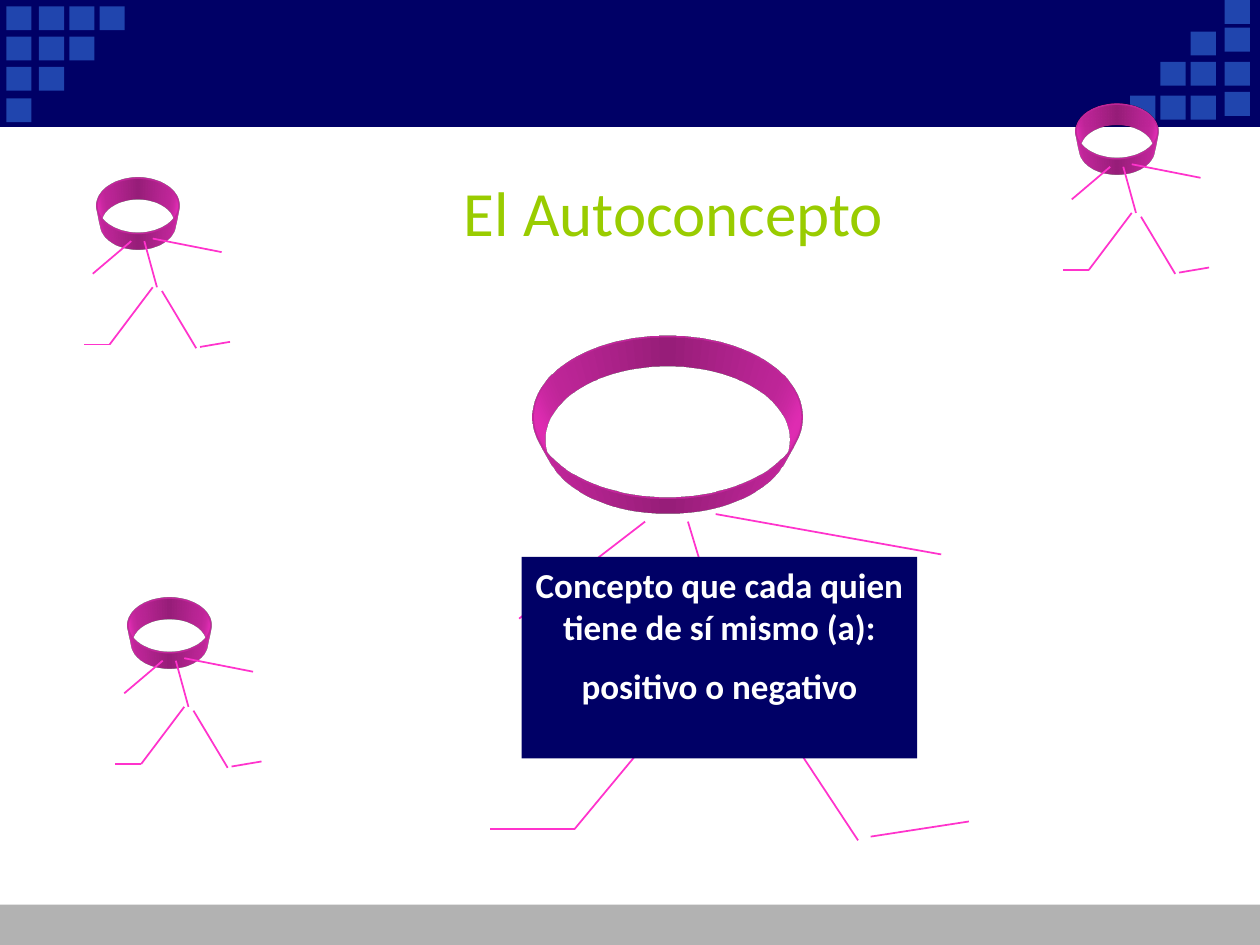
from dataclasses import dataclass

import lxml.etree
import pptx
import pptx.dml.color
import pptx.enum.shapes
import pptx.enum.text
import pptx.oxml.ns
import pptx.util

Inches = pptx.util.Inches
Shape = pptx.enum.shapes.MSO_SHAPE
Align = pptx.enum.text.PP_ALIGN


@dataclass
class Theme:
    navy: str = "000066"
    tile: str = "2045AE"
    gray: str = "B2B2B2"
    lime: str = "99CC00"
    white: str = "FFFFFF"
    pink: str = "FF33CC"
    font: str = "Calibri"
    title: int = 36
    body: int = 20


LIMBS = [
    (1.23, 1.47, 1.56, 2.56),
    (1.45, 1.41, 3.24, 1.73),
    (0.89, 1.47, -0.11, 2.24),
    (1.45, 2.56, 0.33, 3.91),
    (1.69, 2.65, 2.58, 4),
    (2.68, 3.97, 3.46, 3.85),
    (0.33, 3.91, -0.34, 3.91),
]
HEAD = (2.13, 1.28)
DEPTH = """<a:spPr xmlns:a="http://schemas.openxmlformats.org/drawingml/2006/main">
<a:scene3d><a:camera prst="legacyPerspectiveBottom"/><a:lightRig rig="legacyFlat3" dir="b"/></a:scene3d>
<a:sp3d extrusionH="887400" prstMaterial="legacyMatte">
<a:extrusionClr><a:srgbClr val="{}"/></a:extrusionClr></a:sp3d></a:spPr>"""


def tint(code):
    return pptx.dml.color.RGBColor.from_string(code)


class Painter:
    def __init__(self, slide, theme):
        self.slide = slide
        self.theme = theme
        self.shapes = slide.shapes

    def group(self):
        self.shapes = self.slide.shapes.add_group_shape().shapes

    def leave(self):
        self.shapes = self.slide.shapes

    def stroke(self, item, code, width):
        item.line.color.rgb = tint(code)
        item.line.width = pptx.util.Pt(width)

    def block(self, x, y, w, h, fill=None, kind=Shape.RECTANGLE):
        item = self.shapes.add_shape(kind, *map(Inches, (x, y, w, h)))
        item.shadow.inherit = False
        item.line.fill.background()
        if fill:
            item.fill.solid()
            item.fill.fore_color.rgb = tint(fill)
        else:
            item.fill.background()
        return item

    def line(self, *ends):
        item = self.shapes.add_connector(pptx.enum.shapes.MSO_CONNECTOR.STRAIGHT, *map(Inches, ends))
        self.stroke(item, self.theme.pink, 1)
        lxml.etree.SubElement(item._element.spPr, pptx.oxml.ns.qn("a:effectLst"))

    def text(self, frame, lines, look, wrap=True, gap=0):
        frame.word_wrap = wrap
        frame.vertical_anchor = pptx.enum.text.MSO_ANCHOR.TOP
        for i, words in enumerate(lines):
            para = frame.paragraphs[0] if i == 0 else frame.add_paragraph()
            para.alignment = Align.CENTER
            para.space_before = pptx.util.Pt(gap if i else 0)
            run = para.add_run()
            run.text = words
            for key, value in look.items():
                if key == "color":
                    run.font.color.rgb = value
                else:
                    setattr(run.font, key, value)

    def title(self, words, x, y, w, h):
        box = self.shapes.add_textbox(*map(Inches, (x, y, w, h)))
        look = {"name": self.theme.font, "size": pptx.util.Pt(self.theme.title), "color": tint(self.theme.lime)}
        self.text(box.text_frame, [words], look, wrap=False)

    def panel(self, lines, x, y, w, h):
        box = self.block(x, y, w, h, self.theme.navy)
        look = {
            "name": self.theme.font,
            "size": pptx.util.Pt(self.theme.body),
            "bold": True,
            "color": tint(self.theme.white),
        }
        self.text(box.text_frame, lines, look, gap=10)

    def head(self, x, y, w, h):
        item = self.block(x, y, w, h, kind=Shape.OVAL)
        self.stroke(item, self.theme.pink, 1)
        for part in list(pptx.oxml.parse_xml(DEPTH.format(self.theme.pink))):
            item._element.spPr.append(part)

    def figure(self, x, y, w, h):
        self.group()
        across, down = w / HEAD[0], h / HEAD[1]
        self.head(x, y, w, h)
        for x1, y1, x2, y2 in LIMBS:
            self.line(x + x1 * across, y + y1 * down, x + x2 * across, y + y2 * down)
        self.leave()

    def stairs(self, cols, rows, edge):
        self.group()
        for i in range(4):
            for j in range(4 - i):
                self.block(cols[j], rows[i] if j else edge[i], 0.2, 0.19, self.theme.tile)
        self.leave()


def main():
    deck = pptx.Presentation()
    deck.slide_width, deck.slide_height = Inches(10), Inches(7.5)
    theme = Theme()
    paint = Painter(deck.slides.add_slide(deck.slide_layouts[6]), theme)

    paint.block(0, 7.18, 10, 0.33, theme.gray)
    bar = paint.block(0, 0, 10, 1, theme.navy)
    paint.stroke(bar, theme.navy, 0.75)
    steps = (0.05, 0.29, 0.53, 0.78)
    paint.stairs((0.05, 0.31, 0.55, 0.79), steps, steps)
    paint.stairs((9.72, 9.45, 9.21, 8.97), (0.76, 0.49, 0.25, 0), (0.73, 0.49, 0.22, 0))

    paint.title("El Autoconcepto", 3.47, 1.33, 3.75, 1.75)
    paint.figure(4.23, 2.67, *HEAD)
    lines = ["Concepto que cada quien tiene de sí mismo (a):", "positivo o negativo"]
    paint.panel(lines, 4.14, 4.42, 3.14, 1.6)
    for x, y in ((0.77, 1.42), (8.54, 0.83), (1.02, 4.75)):
        paint.figure(x, y, 0.65, 0.43)

    deck.save("out.pptx")


if __name__ == "__main__":
    main()
